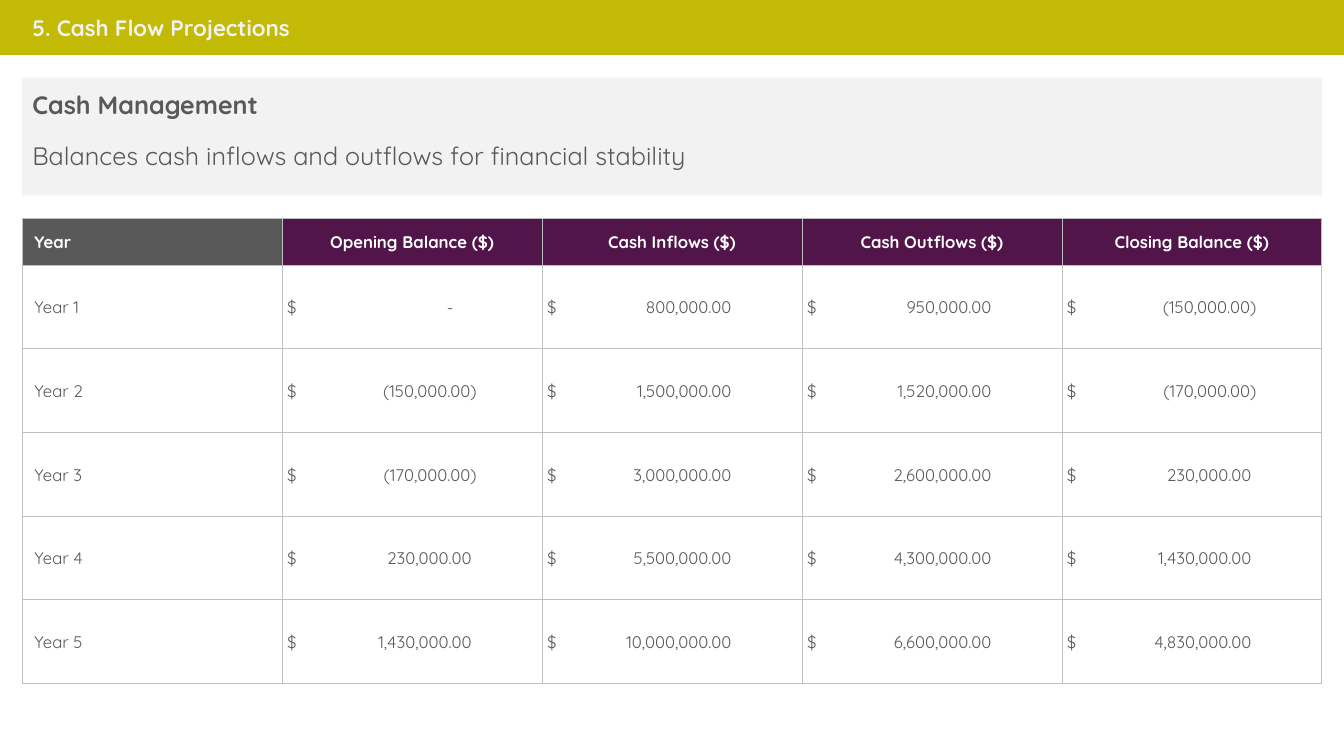
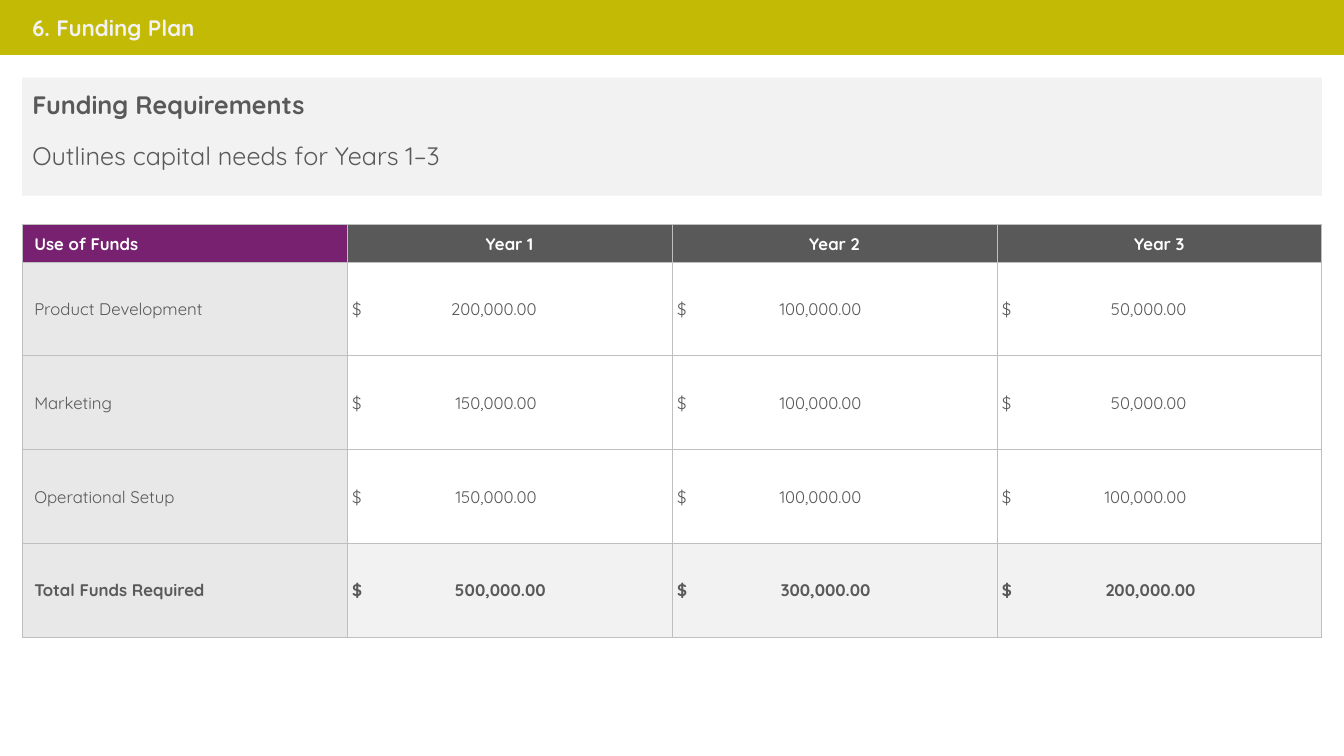
from lxml import etree
from pptx import Presentation
from pptx.dml.color import RGBColor
from pptx.enum.text import MSO_ANCHOR, MSO_AUTO_SIZE, PP_ALIGN
from pptx.oxml.ns import qn
from pptx.util import Inches, Pt

MIDDLE, TOP = MSO_ANCHOR.MIDDLE, MSO_ANCHOR.TOP
LEFT, CENTER = PP_ALIGN.LEFT, PP_ALIGN.CENTER
NO_AUTOFIT = MSO_AUTO_SIZE.NONE
TITLE_AND_CONTENT = 1

SLIDE_WIDTH, SLIDE_HEIGHT = 13.33, 7.5
MARGIN, CONTENT_WIDTH = 0.22, 12.89
LABEL_INSET, AMOUNT_INSET, EDGE_INSET = 0.12, 0.05, 0.01

OLIVE, PLUM, PURPLE = "C3BA05", "51154A", "782170"
DARK_GRAY, MID_GRAY, LABEL_GRAY, PALE_GRAY = "595959", "BFBFBF", "E8E8E8", "F2F2F2"
WHITE = "FFFFFF"


def rgb(hex_color):
    return RGBColor.from_string(hex_color)


def set_all(target, formats):
    for name, value in formats.items():
        setattr(target, name, value)


def paint(fill, hex_color):
    fill.solid()
    fill.fore_color.rgb = rgb(hex_color)


def amount_stop(amount, bold):
    """Right tab stop in inches; brackets hang and a dash sits at the decimal point."""
    if amount == "-":
        return 1.65
    if bold:
        return 1.92
    return 1.88 if amount.endswith(")") else 1.83


class Deck:
    """Holds the shared style and the slide being built."""

    font = "Quicksand"

    def __init__(self):
        self.presentation = Presentation()
        set_all(self.presentation, {"slide_width": Inches(SLIDE_WIDTH),
                                    "slide_height": Inches(SLIDE_HEIGHT)})
        self.slide = None

    def add_text(self, paragraph, text, size, color, bold=False, align=LEFT):
        paragraph.alignment = align
        run = paragraph.add_run()
        run.text = text
        set_all(run.font, {"name": self.font, "size": Pt(size), "bold": bold})
        run.font.color.rgb = rgb(color)

    def place(self, placeholder, box, fill, frame_formats):
        """Move and fill a placeholder, and return its text frame."""
        sides = ("left", "top", "width", "height")
        set_all(placeholder, dict(zip(sides, map(Inches, box))))
        paint(placeholder.fill, fill)
        set_all(placeholder.text_frame,
                {"auto_size": NO_AUTOFIT, "word_wrap": True, **frame_formats})
        return placeholder.text_frame

    def add_slide(self, title):
        layout = self.presentation.slide_layouts[TITLE_AND_CONTENT]
        self.slide = self.presentation.slides.add_slide(layout)
        band = self.slide.shapes.title
        frame = self.place(band, (0, 0, SLIDE_WIDTH, 0.54), OLIVE,
                           {"margin_left": Inches(0.32), "vertical_anchor": MIDDLE})
        band.line.color.rgb = rgb(OLIVE)
        band.line.width = Pt(1.5)
        self.add_text(frame.paragraphs[0], title, 16, PALE_GRAY, bold=True)

    def add_summary(self, heading, description):
        frame = self.place(self.slide.placeholders[1], (MARGIN, 0.77, CONTENT_WIDTH, 1.17),
                           PALE_GRAY,
                           {"margin_left": Inches(0.1), "margin_top": Inches(0.12),
                            "vertical_anchor": TOP})
        lines = ((frame.paragraphs[0], heading, True, 0),
                 (frame.add_paragraph(), description, False, 14.5))
        for paragraph, text, bold, gap in lines:
            self.add_text(paragraph, text, 18, DARK_GRAY, bold)
            set_all(paragraph, {"space_before": Pt(gap), "space_after": Pt(0),
                                "line_spacing": 1.0})
            properties = paragraph._p.get_or_add_pPr()
            properties.set("marL", "0")
            properties.set("indent", "0")
            etree.SubElement(properties, qn("a:buNone"))

    def add_borders(self, cell):
        properties = cell._tc.get_or_add_tcPr()
        for side in ("lnL", "lnR", "lnT", "lnB"):
            line = etree.SubElement(properties, qn(f"a:{side}"), w=str(Pt(0.5)))
            solid = etree.SubElement(line, qn("a:solidFill"))
            etree.SubElement(solid, qn("a:srgbClr"), val=MID_GRAY)

    def format_cell(self, cell, fill, inset):
        self.add_borders(cell)
        paint(cell.fill, fill)
        set_all(cell, {"vertical_anchor": MIDDLE, "margin_left": Inches(inset),
                       "margin_right": Inches(EDGE_INSET),
                       "margin_top": Inches(EDGE_INSET), "margin_bottom": 0})

    def add_header(self, cell, text, fill, is_label):
        self.format_cell(cell, fill, LABEL_INSET if is_label else EDGE_INSET)
        self.add_text(cell.text_frame.paragraphs[0], text, 12, WHITE, bold=True,
                      align=LEFT if is_label else CENTER)

    def add_label(self, cell, text, fill, bold):
        self.format_cell(cell, fill, LABEL_INSET)
        self.add_text(cell.text_frame.paragraphs[0], text, 12, DARK_GRAY, bold)

    def add_amount(self, cell, amount, fill, bold):
        self.format_cell(cell, fill, AMOUNT_INSET)
        paragraph = cell.text_frame.paragraphs[0]
        self.add_text(paragraph, f"$\t{amount}", 12, DARK_GRAY, bold)
        stops = etree.SubElement(paragraph._p.get_or_add_pPr(), qn("a:tabLst"))
        etree.SubElement(stops, qn("a:tab"), algn="r",
                         pos=str(Inches(amount_stop(amount, bold))))

    def add_amounts_table(self, top, header_height, row_height, headers, rows,
                          header_fills, label_fill, has_total=False):
        """header_fills holds the fill of the first header and of the others."""
        height = header_height + row_height * len(rows)
        table = self.slide.shapes.add_table(
            len(rows) + 1, len(headers), Inches(MARGIN), Inches(top),
            Inches(CONTENT_WIDTH), Inches(height)).table
        set_all(table, {"first_row": False, "horz_banding": False})
        for column in table.columns:
            column.width = Inches(CONTENT_WIDTH / len(headers))
        for index, row in enumerate(table.rows):
            row.height = Inches(row_height if index else header_height)
        for column, header in enumerate(headers):
            self.add_header(table.cell(0, column), header,
                            header_fills[min(column, 1)], column == 0)
        for index, (label, *amounts) in enumerate(rows, 1):
            is_total = has_total and index == len(rows)
            self.add_label(table.cell(index, 0), label, label_fill, is_total)
            for column, amount in enumerate(amounts, 1):
                self.add_amount(table.cell(index, column), amount,
                                PALE_GRAY if is_total else WHITE, is_total)


def main():
    deck = Deck()

    deck.add_slide("5. Cash Flow Projections")
    deck.add_summary("Cash Management",
                     "Balances cash inflows and outflows for financial stability")
    deck.add_amounts_table(
        2.17, 0.46, 0.83,
        ("Year", "Opening Balance ($)", "Cash Inflows ($)", "Cash Outflows ($)",
         "Closing Balance ($)"),
        (("Year 1", "-", "800,000.00", "950,000.00", "(150,000.00)"),
         ("Year 2", "(150,000.00)", "1,500,000.00", "1,520,000.00", "(170,000.00)"),
         ("Year 3", "(170,000.00)", "3,000,000.00", "2,600,000.00", "230,000.00"),
         ("Year 4", "230,000.00", "5,500,000.00", "4,300,000.00", "1,430,000.00"),
         ("Year 5", "1,430,000.00", "10,000,000.00", "6,600,000.00", "4,830,000.00")),
        (DARK_GRAY, PLUM), WHITE)

    deck.add_slide("6. Funding Plan")
    deck.add_summary("Funding Requirements", "Outlines capital needs for Years 1–3")
    deck.add_amounts_table(
        2.23, 0.37, 0.93,
        ("Use of Funds", "Year 1", "Year 2", "Year 3"),
        (("Product Development", "200,000.00", "100,000.00", "50,000.00"),
         ("Marketing", "150,000.00", "100,000.00", "50,000.00"),
         ("Operational Setup", "150,000.00", "100,000.00", "100,000.00"),
         ("Total Funds Required", "500,000.00", "300,000.00", "200,000.00")),
        (PURPLE, DARK_GRAY), LABEL_GRAY, has_total=True)

    deck.presentation.save("out.pptx")


if __name__ == "__main__":
    main()
